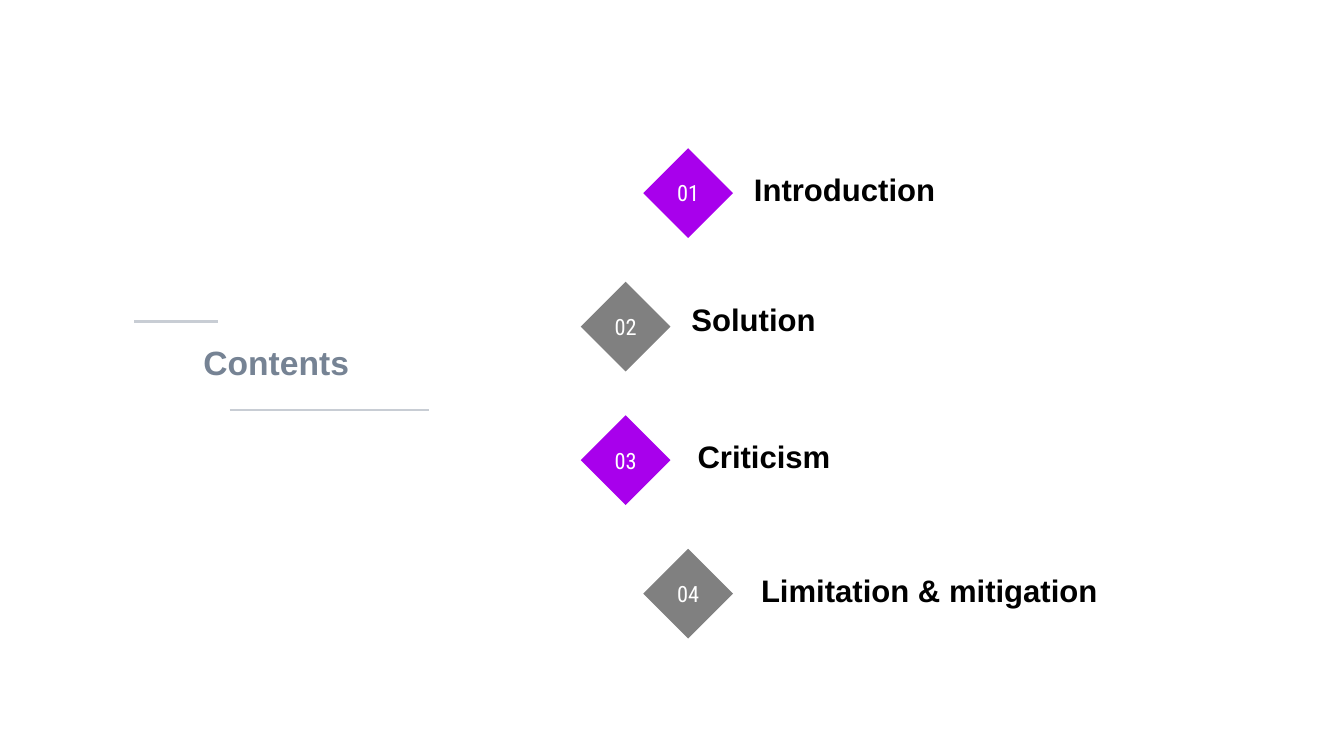
"""Build a contents slide with four numbered diamonds."""
from dataclasses import dataclass

from lxml import etree
from pptx import Presentation
from pptx.dml.color import RGBColor
from pptx.enum.shapes import MSO_CONNECTOR, MSO_SHAPE
from pptx.enum.text import MSO_ANCHOR, PP_ALIGN
from pptx.oxml.ns import qn
from pptx.slide import Slide
from pptx.text.text import TextFrame
from pptx.util import Inches, Pt

DIAMOND = MSO_SHAPE.DIAMOND
STRAIGHT = MSO_CONNECTOR.STRAIGHT
TOP, MIDDLE, BOTTOM = MSO_ANCHOR.TOP, MSO_ANCHOR.MIDDLE, MSO_ANCHOR.BOTTOM
LEFT, CENTER = PP_ALIGN.LEFT, PP_ALIGN.CENTER
TITLE_ONLY = 5


@dataclass(frozen=True)
class TextStyle:
    font: str
    size: float
    color: str
    bold: bool
    align: PP_ALIGN
    anchor: MSO_ANCHOR


@dataclass(frozen=True)
class Theme:
    accents: tuple[str, str] = ("A800EC", "808080")
    rule: str = "C8CDD4"
    rule_width: float = 1.75
    title: TextStyle = TextStyle("Arial", 24, "768394", True, CENTER, TOP)
    number: TextStyle = TextStyle("Roboto Condensed", 16, "FFFFFF", False, CENTER, MIDDLE)
    label: TextStyle = TextStyle("Arial", 22.2, "000000", True, LEFT, BOTTOM)


@dataclass(frozen=True)
class Chapter:
    label: str
    diamond_left: float
    label_left: float
    label_top: float


@dataclass(frozen=True)
class Rule:
    start: float
    end: float
    top: float


THEME = Theme()
DIAMOND_SIZE = 0.89
FIRST_TOP = 1.47
PITCH = 1.325
CHAPTERS = (
    Chapter("Introduction", 6.38, 7.38, 1.71),
    Chapter("Solution", 5.76, 6.76, 3),
    Chapter("Criticism", 5.76, 6.82, 4.36),
    Chapter("Limitation & mitigation", 6.38, 7.45, 5.69),
)
RULES = (Rule(1.33, 2.16, 3.19), Rule(2.28, 4.25, 4.07))


def write(frame: TextFrame, text: str, style: TextStyle) -> None:
    frame.word_wrap = True
    frame.vertical_anchor = style.anchor
    para = frame.paragraphs[0]
    para.alignment = style.align
    span = para.add_run()
    span.text = text
    span.font.name = style.font
    span.font.size = Pt(style.size)
    span.font.bold = style.bold
    span.font.color.rgb = RGBColor.from_string(style.color)


def draw_title(page: Slide, text: str) -> None:
    title = page.shapes.title
    title.left, title.top = Inches(1.65), Inches(3.34)
    title.width, title.height = Inches(2.18), Inches(0.58)
    write(title.text_frame, text, THEME.title)
    title.text_frame.paragraphs[0].line_spacing = 1.0


def draw_chapter(page: Slide, index: int, chapter: Chapter) -> None:
    diamond = page.shapes.add_shape(
        DIAMOND, Inches(chapter.diamond_left), Inches(FIRST_TOP + index * PITCH),
        Inches(DIAMOND_SIZE), Inches(DIAMOND_SIZE))
    diamond.shadow.inherit = False
    diamond.fill.solid()
    accent = THEME.accents[index % len(THEME.accents)]
    diamond.fill.fore_color.rgb = RGBColor.from_string(accent)
    diamond.line.fill.background()
    frame = diamond.text_frame
    frame.margin_left = frame.margin_right = 0
    frame.margin_top = frame.margin_bottom = 0
    write(frame, f"{index + 1:02}", THEME.number)
    box = page.shapes.add_textbox(
        Inches(chapter.label_left), Inches(chapter.label_top), Inches(3.9), Inches(0.4))
    write(box.text_frame, chapter.label, THEME.label)


def draw_rule(page: Slide, rule: Rule) -> None:
    line = page.shapes.add_connector(
        STRAIGHT, Inches(rule.start), Inches(rule.top), Inches(rule.end), Inches(rule.top))
    line.line.color.rgb = RGBColor.from_string(THEME.rule)
    line.line.width = Pt(THEME.rule_width)
    etree.SubElement(line._element.spPr, qn("a:effectLst"))


def main() -> None:
    deck = Presentation()
    deck.slide_width, deck.slide_height = Inches(13.33), Inches(7.5)
    page = deck.slides.add_slide(deck.slide_layouts[TITLE_ONLY])
    draw_title(page, "Contents")
    for index, chapter in enumerate(CHAPTERS):
        draw_chapter(page, index, chapter)
    for rule in RULES:
        draw_rule(page, rule)
    deck.save("out.pptx")


if __name__ == "__main__":
    main()
